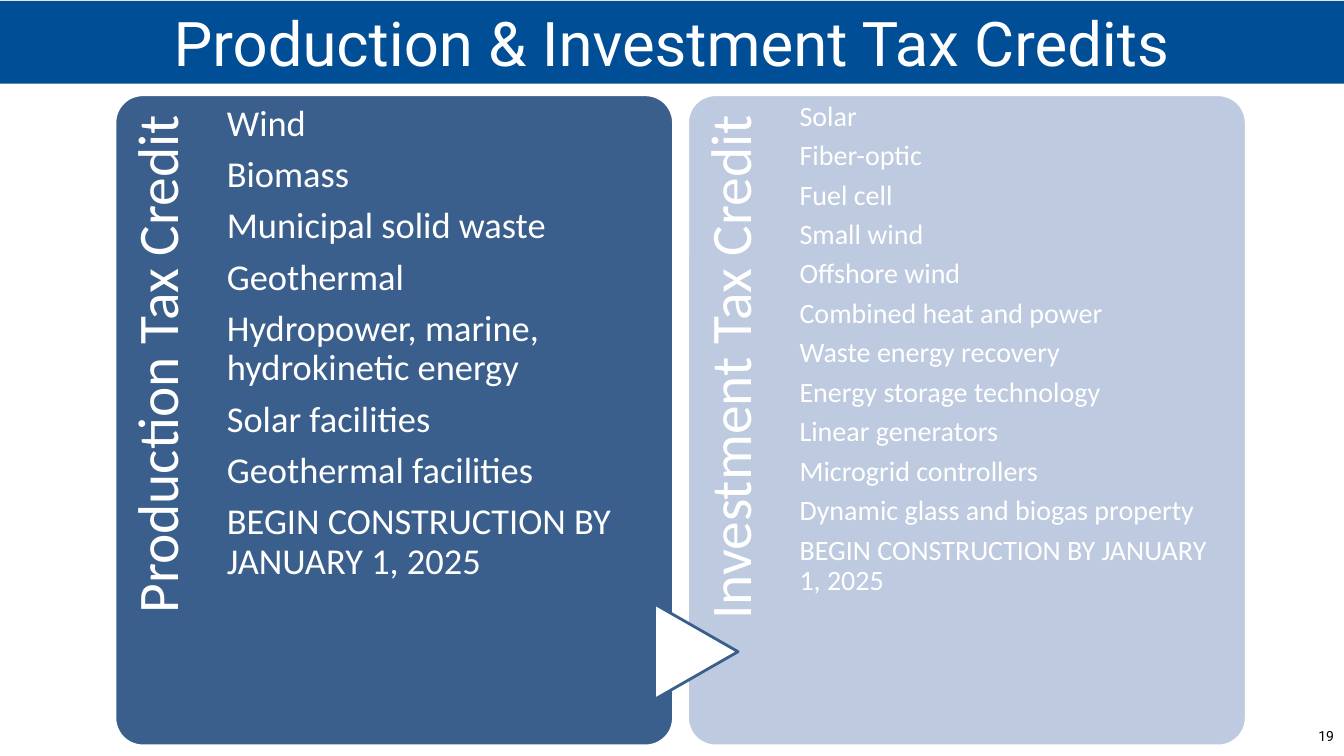
import pptx
import pptx.dml.color
import pptx.enum.shapes
import pptx.enum.text
import pptx.util
from lxml import etree
from pptx.oxml.ns import qn
from pptx.util import Inches

ALIGN = pptx.enum.text.PP_ALIGN
ANCHOR = pptx.enum.text.MSO_ANCHOR
SHAPE = pptx.enum.shapes.MSO_SHAPE

COLORS = {
    "banner": "004E95",
    "production": "3A5F8C",
    "investment": "BECADF",
    "white": "FFFFFF",
    "black": "000000",
}

CREDITS = [
    {
        "heading": "Production Tax Credit",
        "color": "production",
        "size": 26,
        "top_inset": 0.1,
        "items": [
            "Wind",
            "Biomass",
            "Municipal solid waste",
            "Geothermal",
            "Hydropower, marine, hydrokinetic energy",
            "Solar facilities",
            "Geothermal facilities",
            "BEGIN CONSTRUCTION BY JANUARY 1, 2025",
        ],
    },
    {
        "heading": "Investment Tax Credit",
        "color": "investment",
        "size": 20,
        "top_inset": 0.07,
        "items": [
            "Solar",
            "Fiber-optic",
            "Fuel cell",
            "Small wind",
            "Offshore wind",
            "Combined heat and power",
            "Waste energy recovery",
            "Energy storage technology",
            "Linear generators",
            "Microgrid controllers",
            "Dynamic glass and biogas property",
            "BEGIN CONSTRUCTION BY JANUARY 1, 2025",
        ],
    },
]

PANEL_LEFT, PANEL_TOP, PANEL_WIDTH, PANEL_HEIGHT = 1.14, 0.94, 5.54, 6.46
PANEL_STEP = 5.68


def rgb(color):
    return pptx.dml.color.RGBColor.from_string(COLORS[color])


def place(shape, left, top, width, height):
    shape.left, shape.top = Inches(left), Inches(top)
    shape.width, shape.height = Inches(width), Inches(height)


def write(shape, lines, size, font="Calibri", color="white", align=ALIGN.LEFT,
          anchor=ANCHOR.TOP, insets=(0.1, 0.05, 0.1, 0.05),
          line_spacing=1.0, space_after=0):
    """Fill a shape with one unbulleted paragraph per line."""
    frame = shape.text_frame
    frame.word_wrap = True
    frame.auto_size = pptx.enum.text.MSO_AUTO_SIZE.NONE
    frame.vertical_anchor = anchor
    (frame.margin_left, frame.margin_top,
     frame.margin_right, frame.margin_bottom) = map(Inches, insets)
    for index, line in enumerate(lines):
        paragraph = frame.add_paragraph() if index else frame.paragraphs[0]
        properties = paragraph._p.get_or_add_pPr()
        properties.set("marL", "0")
        properties.set("indent", "0")
        etree.SubElement(properties, qn("a:buNone"))
        paragraph.alignment = align
        paragraph.line_spacing = line_spacing
        paragraph.space_before = pptx.util.Pt(0)
        paragraph.space_after = pptx.util.Pt(space_after)
        run = paragraph.add_run()
        run.text = line
        run.font.name = font
        run.font.size = pptx.util.Pt(size)
        run.font.color.rgb = rgb(color)


def add_outlined(slide, kind, box, fill, line):
    shape = slide.shapes.add_shape(kind, *map(Inches, box))
    shape.shadow.inherit = False
    shape.fill.solid()
    shape.fill.fore_color.rgb = rgb(fill)
    shape.line.color.rgb = rgb(line)
    shape.line.width = pptx.util.Pt(2)
    return shape


def add_banner(title, text):
    place(title, 0, 0.01, 13.33, 0.82)
    title.fill.solid()
    title.fill.fore_color.rgb = rgb("banner")
    write(title, [text], 44, font="Roboto", align=ALIGN.CENTER,
          anchor=ANCHOR.MIDDLE)


def add_credit_panel(slide, left, credit):
    panel = add_outlined(slide, SHAPE.ROUNDED_RECTANGLE,
                         (left, PANEL_TOP, PANEL_WIDTH, PANEL_HEIGHT),
                         credit["color"], "white")
    panel.adjustments[0] = 0.05
    heading = slide.shapes.add_textbox(
        Inches(left - 2.1), Inches(3.03), Inches(5.29), Inches(1.11))
    heading.rotation = 270
    write(heading, [credit["heading"]], 41, align=ALIGN.RIGHT,
          insets=(0, 0.15, 0.2, 0), line_spacing=0.9)


def fill_credit_list(slide, body, left, credit):
    slide.shapes._spTree.append(body._element)  # in front of its panel
    place(body, left + 1.11, PANEL_TOP, 4.13, PANEL_HEIGHT)
    write(body, credit["items"], credit["size"],
          insets=(0, credit["top_inset"], 0, 0), line_spacing=0.9,
          space_after=round(credit["size"] * 0.33, 1))


def main():
    deck = pptx.Presentation()
    deck.slide_width, deck.slide_height = Inches(13.33), Inches(7.5)
    slide = deck.slides.add_slide(deck.slide_layouts[3])
    title, *bodies = slide.placeholders

    add_banner(title, "Production & Investment Tax Credits")
    page_number = slide.shapes.add_textbox(
        Inches(10.22), Inches(7.17), Inches(3.11), Inches(0.32))
    write(page_number, ["19"], 10, font="Roboto", color="black",
          align=ALIGN.RIGHT)

    for column, (body, credit) in enumerate(zip(bodies, CREDITS)):
        left = PANEL_LEFT + column * PANEL_STEP
        add_credit_panel(slide, left, credit)
        fill_credit_list(slide, body, left, credit)

    arrow = add_outlined(slide, SHAPE.FLOWCHART_EXTRACT,
                         (6.43, 6.05, 0.95, 0.83), "white", "production")
    arrow.rotation = 90
    deck.save("out.pptx")


if __name__ == "__main__":
    main()
